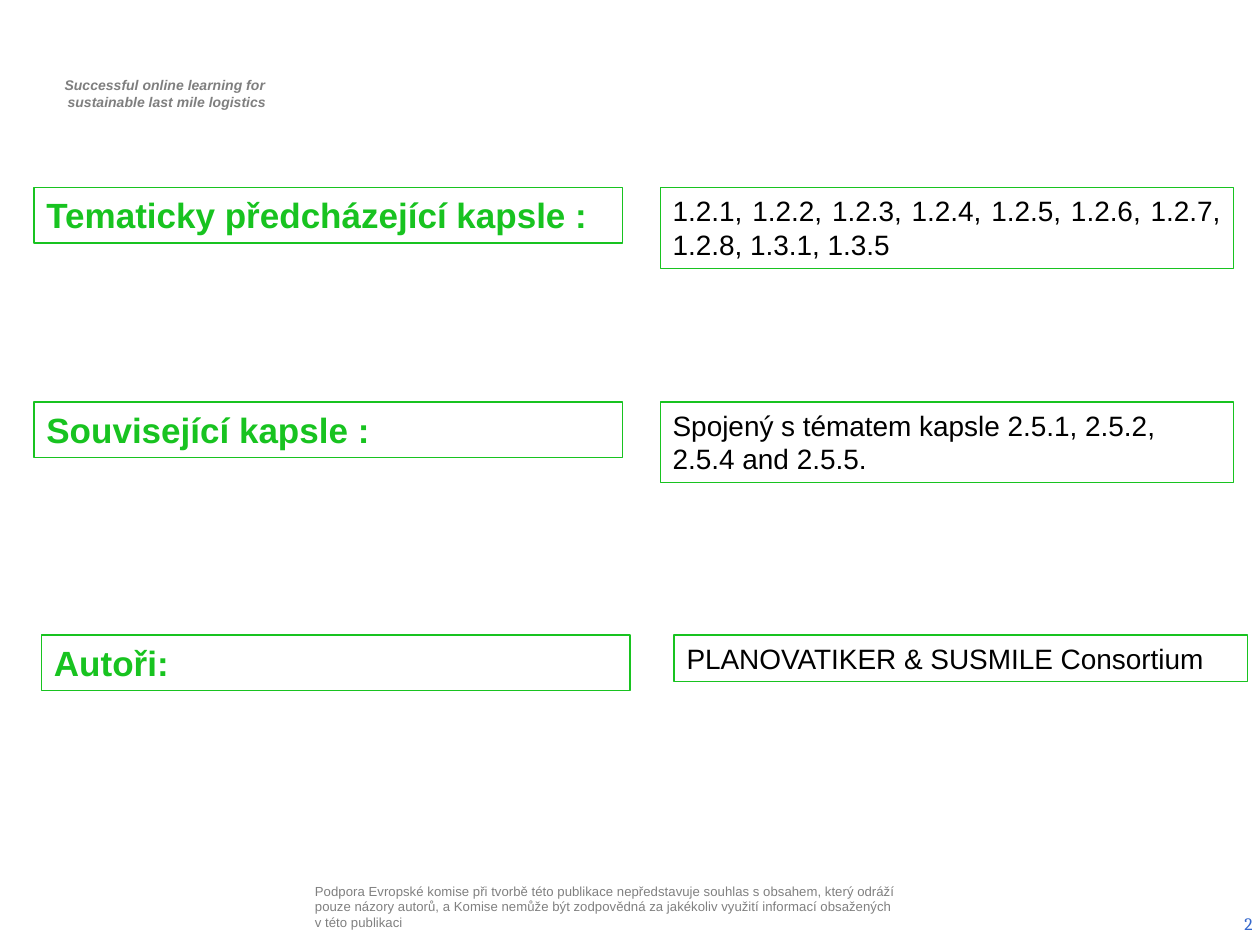
import pptx
import pptx.dml.color
import pptx.enum.shapes
import pptx.enum.text
import pptx.util

Inches = pptx.util.Inches
RGBColor = pptx.dml.color.RGBColor
ALIGN = pptx.enum.text.PP_ALIGN
ANCHOR = pptx.enum.text.MSO_ANCHOR
AUTO_SIZE = pptx.enum.text.MSO_AUTO_SIZE

GREEN = RGBColor(0x18, 0xC3, 0x20)
BLACK = RGBColor(0, 0, 0)
WHITE = RGBColor(0xFF, 0xFF, 0xFF)
DARK_GREY = RGBColor(0x7F, 0x7F, 0x7F)
GREY = RGBColor(0x80, 0x80, 0x80)
BLUE = RGBColor(0x33, 0x66, 0xCC)

TAGLINE = ["Successful online learning for ", "sustainable last mile logistics"]
DISCLAIMER = [
    "Podpora Evropské komise při tvorbě této publikace nepředstavuje souhlas "
    "s obsahem, který odráží pouze názory autorů, a Komise nemůže být zodpovědná "
    "za jakékoliv využití informací obsažených v této publikaci"
]
PAGE_NUMBER = ["2"]

# top, label left, label, value left, value height, value, value alignment
ROWS = [
    (1.49, 0.27, "Tematicky předcházející kapsle :", 5.24, 0.64,
     "1.2.1, 1.2.2, 1.2.3, 1.2.4, 1.2.5, 1.2.6, 1.2.7, 1.2.8, 1.3.1, 1.3.5 ",
     ALIGN.JUSTIFY),
    (3.19, 0.27, "Související kapsle :", 5.24, 0.64,
     "Spojený s tématem kapsle 2.5.1, 2.5.2, 2.5.4 and 2.5.5.", ALIGN.LEFT),
    (5.04, 0.33, "Autoři:", 5.35, 0.37,
     "PLANOVATIKER & SUSMILE Consortium", ALIGN.LEFT),
]
LABEL_W, LABEL_H, VALUE_W = 4.67, 0.44, 4.55

TAGLINE_FONT = {"name": "Arial", "size": 8, "color": DARK_GREY, "bold": True, "italic": True}
DISCLAIMER_FONT = {"name": "Arial", "size": 7.5, "color": GREY}
NUMBER_FONT = {"name": "Cambria", "size": 10, "color": BLUE}
LABEL_FONT = {"name": "Arial", "size": 20, "color": GREEN, "bold": True}
VALUE_FONT = {"name": "Arial", "size": 16, "color": BLACK}


def write(sp, lines, font, align=ALIGN.LEFT, anchor=ANCHOR.TOP,
          fit=AUTO_SIZE.NONE, inset=(0.1, 0.05), indent=0):
    tf = sp.text_frame
    tf.word_wrap = True
    tf.auto_size = fit
    tf.vertical_anchor = anchor
    tf.margin_left = tf.margin_right = Inches(inset[0])
    tf.margin_top = tf.margin_bottom = Inches(inset[1])
    for i, line in enumerate(lines):
        p = tf.paragraphs[0] if i == 0 else tf.add_paragraph()
        p.alignment = align
        if indent:
            p._p.get_or_add_pPr().set("marL", str(Inches(indent)))
        r = p.add_run()
        r.text = line
        for key, value in font.items():
            if key == "color":
                r.font.color.rgb = value
            else:
                setattr(r.font, key, pptx.util.Pt(value) if key == "size" else value)


def add_text(slide, box, lines, font, **layout):
    write(slide.shapes.add_textbox(*map(Inches, box)), lines, font, **layout)


def add_framed(slide, box, text, font, align=ALIGN.LEFT):
    """Add a white box with a thin green outline."""
    sp = slide.shapes.add_shape(pptx.enum.shapes.MSO_SHAPE.RECTANGLE, *map(Inches, box))
    sp.shadow.inherit = False
    sp.fill.solid()
    sp.fill.fore_color.rgb = WHITE
    sp.line.color.rgb = GREEN
    sp.line.width = pptx.util.Pt(0.75)
    write(sp, [text], font, align=align, fit=AUTO_SIZE.SHAPE_TO_FIT_TEXT)


def main():
    prs = pptx.Presentation()
    prs.slide_width, prs.slide_height = Inches(10), Inches(7.5)
    s = prs.slides.add_slide(prs.slide_layouts[6])

    add_text(s, (0.29, 0.56, 2.03, 0.37), TAGLINE, TAGLINE_FONT, align=ALIGN.CENTER,
             fit=AUTO_SIZE.SHAPE_TO_FIT_TEXT, indent=0.04)
    add_text(s, (2.46, 6.95, 4.73, 0.49), DISCLAIMER, DISCLAIMER_FONT,
             anchor=ANCHOR.MIDDLE, inset=(0.04, 0.04))
    add_text(s, (7.71, 7.13, 2.33, 0.4), PAGE_NUMBER, NUMBER_FONT,
             align=ALIGN.RIGHT, anchor=ANCHOR.MIDDLE)

    for top, label_x, label, value_x, value_h, value, align in ROWS:
        add_framed(s, (label_x, top, LABEL_W, LABEL_H), label, LABEL_FONT)
        add_framed(s, (value_x, top, VALUE_W, value_h), value, VALUE_FONT, align)

    prs.save("out.pptx")


if __name__ == "__main__":
    main()
